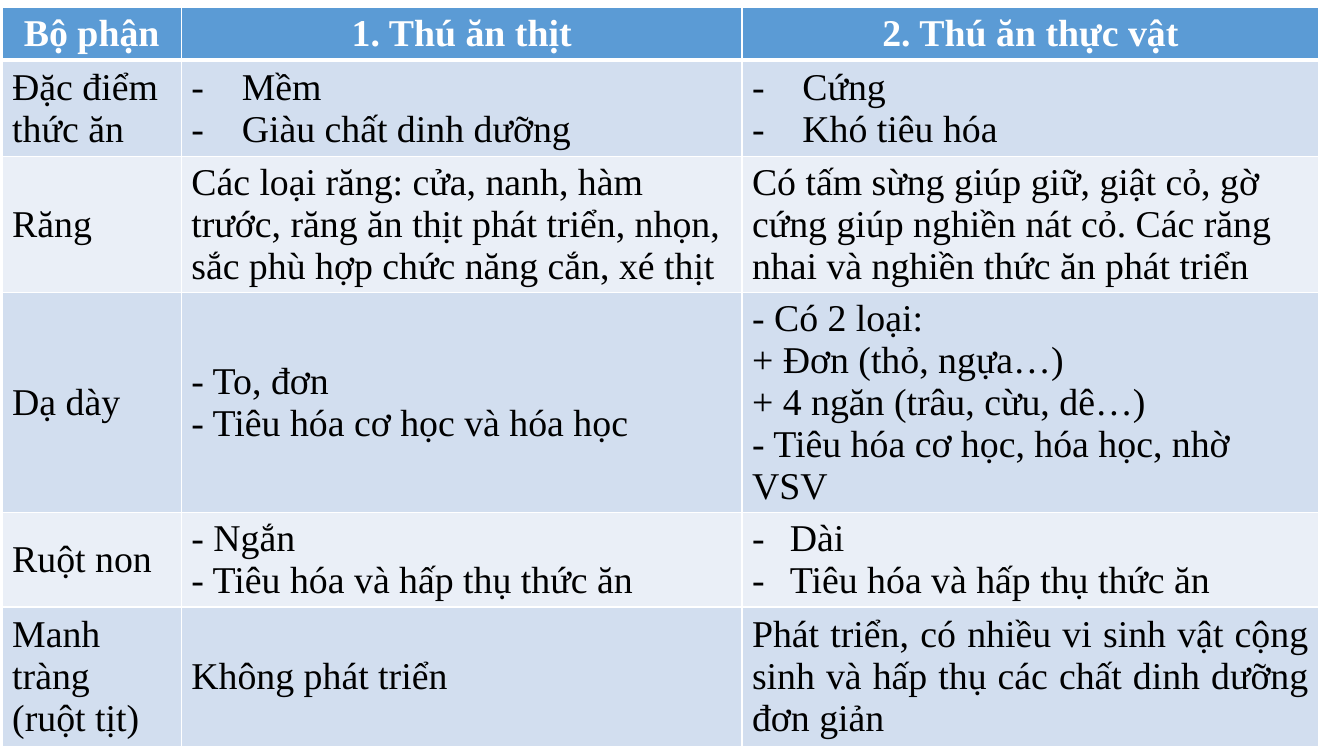
from dataclasses import dataclass

import pptx
import pptx.dml.color
import pptx.enum.text
import pptx.oxml
import pptx.oxml.ns
import pptx.util
from lxml import etree

Pt = pptx.util.Pt
RGB = pptx.dml.color.RGBColor.from_string
ALIGN = pptx.enum.text.PP_ALIGN
MIDDLE = pptx.enum.text.MSO_ANCHOR.MIDDLE
A = pptx.oxml.ns.nsdecls("a")


@dataclass(frozen=True)
class Theme:
    font: str = "Times New Roman"
    size: float = 27
    header_fill: str = "5B9BD5"
    header_text: str = "FFFFFF"
    body_text: str = "000000"
    bands: tuple = ("D2DEEF", "EAEFF7")
    rule: str = "FFFFFF"
    thin: float = 1
    thick: float = 3


@dataclass(frozen=True)
class Cell:
    """Body cell content: its lines, alignment and hanging dash indent."""
    lines: tuple
    align: int = ALIGN.LEFT
    hang: float = 0


class SlideBuilder:
    def __init__(self, s, theme):
        self.s, self.theme = s, theme

    def borders(self, cell, bottom):
        """Draw the four cell edges; call before setting the fill."""
        tcPr = cell._tc.get_or_add_tcPr()
        for side in "LRTB":
            width = Pt(bottom if side == "B" else self.theme.thin)
            tcPr.append(pptx.oxml.parse_xml(
                f'<a:ln{side} {A} w="{width}"><a:solidFill>'
                f'<a:srgbClr val="{self.theme.rule}"/></a:solidFill></a:ln{side}>'))

    def dash(self, p, hang):
        pPr = p._p.get_or_add_pPr()
        pPr.set("marL", str(Pt(hang)))
        pPr.set("indent", str(-Pt(hang)))
        for tag, key, value in (("buFont", "typeface", self.theme.font),
                                ("buChar", "char", "-")):
            etree.SubElement(pPr, pptx.oxml.ns.qn(f"a:{tag}")).set(key, value)

    def text(self, tf, content, color, bold):
        style = {"name": self.theme.font, "size": Pt(self.theme.size), "bold": bold}
        for i, line in enumerate(content.lines):
            p = tf.paragraphs[0] if i == 0 else tf.add_paragraph()
            p.alignment = content.align
            if content.hang:
                self.dash(p, content.hang)
            r = p.add_run()
            r.text = line
            for key, value in style.items():
                setattr(r.font, key, value)
            r.font.color.rgb = RGB(color)

    def table(self, left, top, widths, heights, rows):
        t = self.theme
        sp = self.s.shapes.add_table(
            len(rows), len(widths), Pt(left), Pt(top),
            Pt(sum(widths)), Pt(sum(heights)))
        tbl = sp.table
        for col, width in zip(tbl.columns, widths):
            col.width = Pt(width)
        for i, (row, height, contents) in enumerate(zip(tbl.rows, heights, rows)):
            row.height = Pt(height)
            header = i == 0
            fill = t.header_fill if header else t.bands[(i - 1) % 2]
            for cell, content in zip(row.cells, contents):
                self.borders(cell, t.thick if header else t.thin)
                cell.fill.solid()
                cell.fill.fore_color.rgb = RGB(fill)
                cell.vertical_anchor = MIDDLE
                self.text(cell.text_frame, content,
                          t.header_text if header else t.body_text, header)


# Table content
HEADERS = ("Bộ phận", "1. Thú ăn thịt", "2. Thú ăn thực vật")
ROWS = [
    [Cell((name,), ALIGN.CENTER) for name in HEADERS],
    [Cell(("Đặc điểm thức ăn",)),
     Cell(("Mềm", "Giàu chất dinh dưỡng"), hang=36),
     Cell(("Cứng", "Khó tiêu hóa"), hang=36)],
    [Cell(("Răng",)),
     Cell(("Các loại răng: cửa, nanh, hàm trước, răng ăn thịt phát triển, nhọn, "
           "sắc phù hợp chức năng cắn, xé thịt",)),
     Cell(("Có tấm sừng giúp giữ, giật cỏ, gờ cứng giúp nghiền nát cỏ. "
           "Các răng nhai và nghiền thức ăn phát triển",))],
    [Cell(("Dạ dày",)),
     Cell(("- To, đơn", "- Tiêu hóa cơ học và hóa học")),
     Cell(("- Có 2 loại:", "+ Đơn (thỏ, ngựa…)", "+ 4 ngăn (trâu, cừu, dê…)",
           "- Tiêu hóa cơ học, hóa học, nhờ VSV"))],
    [Cell(("Ruột non",)),
     Cell(("- Ngắn", "- Tiêu hóa và hấp thụ thức ăn")),
     Cell(("Dài", "Tiêu hóa và hấp thụ thức ăn"), hang=27)],
    [Cell(("Manh tràng (ruột tịt)",)),
     Cell(("Không phát triển",), ALIGN.JUSTIFY),
     Cell(("Phát triển, có nhiều vi sinh vật cộng sinh và hấp thụ các chất "
           "dinh dưỡng đơn giản",), ALIGN.JUSTIFY)],
]


def main():
    prs = pptx.Presentation()
    prs.slide_width, prs.slide_height = Pt(960), Pt(540)

    # Comparison table on a blank slide
    s = prs.slides.add_slide(prs.slide_layouts[6])
    SlideBuilder(s, Theme()).table(
        left=1.5, top=5,
        widths=(128, 400.5, 412),
        heights=(38, 69, 96, 127.5, 67, 100),
        rows=ROWS)
    prs.save("out.pptx")


if __name__ == "__main__":
    main()
